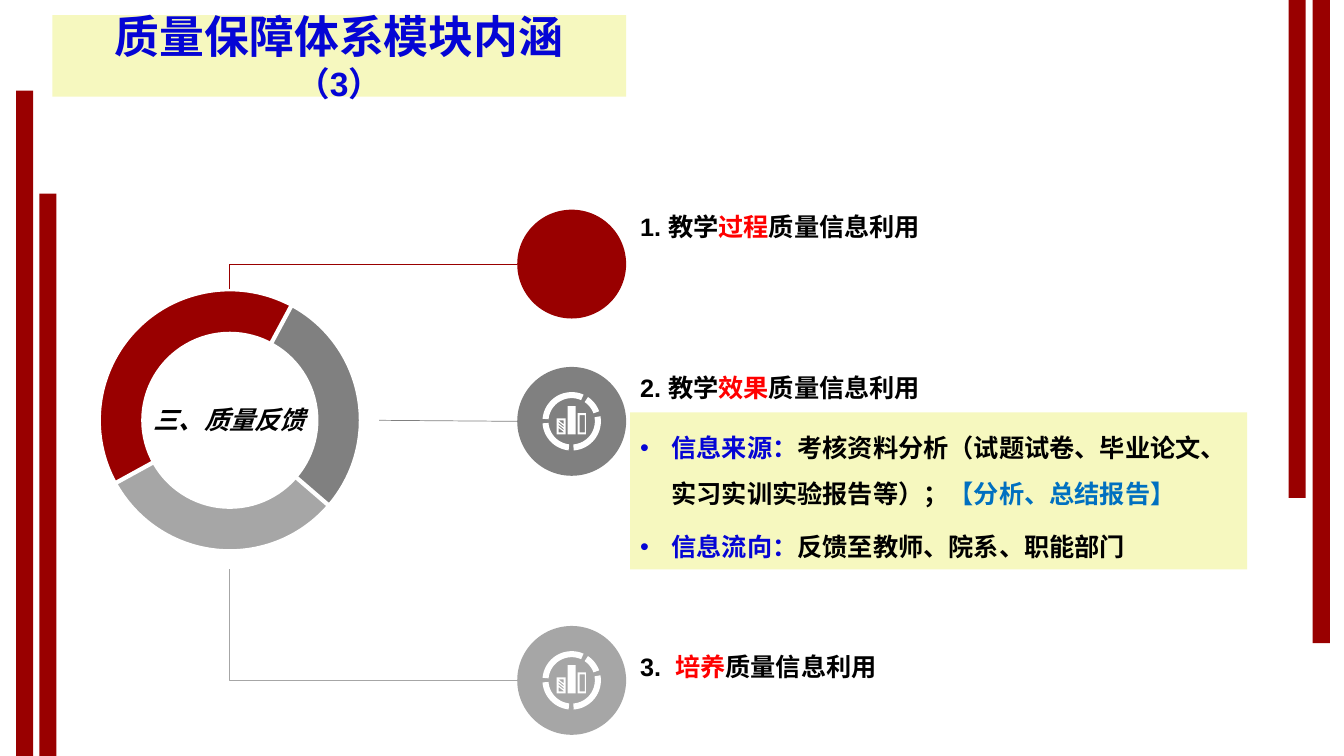
from math import cos, radians, sin

from lxml.etree import SubElement
from pptx import Presentation
from pptx.dml.color import RGBColor
from pptx.enum.shapes import MSO_CONNECTOR, MSO_SHAPE
from pptx.enum.text import MSO_ANCHOR, MSO_AUTO_SIZE, PP_ALIGN
from pptx.oxml.ns import qn
from pptx.util import Inches, Pt

LATIN, CHINESE = "Arial", "Noto Sans CJK SC"
RED, DARK_GRAY, LIGHT_GRAY = "990000", "808080", "A6A6A6"
WHITE, BLACK, CREAM = "FFFFFF", "000000", "F6F8BF"
BLUE, SKY_BLUE, BRIGHT_RED = "0505D5", "0070C0", "FF0000"
CIRCLE_LEFT, CIRCLE_SIZE = 5.13, 1.08
RING_BOX = (0.98, 2.87, 2.6, 2.6)
RING_CENTER_X = 2.28
TEXT_LEFT = 6.25


def color(hex_string):
    return RGBColor.from_string(hex_string)


def fill_shape(shape, fill, outline=None):
    shape.fill.solid()
    shape.fill.fore_color.rgb = color(fill)
    if outline:
        shape.line.color.rgb = color(outline)
        shape.line.width = Pt(3)
    else:
        shape.line.fill.background()


def add_figure(slide, kind, box, fill, outline=None, adjustments=()):
    shape = slide.shapes.add_shape(kind, *map(Inches, box))
    shape.shadow.inherit = False
    fill_shape(shape, fill, outline)
    for index, value in enumerate(adjustments):
        shape.adjustments[index] = value
    return shape


def add_run(paragraph, text, hex_color, size=18, latin=LATIN, italic=False):
    run = paragraph.add_run()
    run.text = text
    font = run.font
    font.name, font.size, font.bold, font.italic = latin, Pt(size), True, italic
    font.color.rgb = color(hex_color)
    SubElement(font._element, qn("a:ea"), typeface=CHINESE)


def place(shape, box):
    shape.left, shape.top, shape.width, shape.height = map(Inches, box)


def fill_title(slide):
    title = slide.shapes.title
    place(title, (0.52, 0.15, 5.69, 0.81))
    geometry = SubElement(title._element.spPr, qn("a:prstGeom"), prst="roundRect")
    SubElement(geometry, qn("a:avLst"))
    fill_shape(title, CREAM)
    frame = title.text_frame
    frame.auto_size = MSO_AUTO_SIZE.NONE
    frame.word_wrap = True
    frame.vertical_anchor = MSO_ANCHOR.MIDDLE
    frame.margin_left = frame.margin_right = Inches(0.2)
    paragraph = frame.paragraphs[0]
    paragraph.alignment = PP_ALIGN.CENTER
    add_run(paragraph, "质量保障体系模块内涵", BLUE, 32)
    add_run(paragraph, "（3）", BLUE, 24)


def fill_details(slide, items):
    body = slide.placeholders[1]
    place(body, (TEXT_LEFT, 4.09, 6.12, 1.56))
    fill_shape(body, CREAM)
    frame = body.text_frame
    frame.auto_size = MSO_AUTO_SIZE.NONE
    frame.word_wrap = True
    for index, runs in enumerate(items):
        paragraph = frame.add_paragraph() if index else frame.paragraphs[0]
        paragraph.line_spacing = 1.5
        paragraph.space_before, paragraph.space_after = Pt(0), Pt(6)
        properties = paragraph._p.get_or_add_pPr()
        properties.set("marL", str(Inches(0.31)))
        properties.set("indent", str(-Inches(0.31)))
        SubElement(properties, qn("a:buFont"), typeface=LATIN)
        SubElement(properties, qn("a:buChar"), char="•")
        for text, hex_color in runs:
            add_run(paragraph, text, hex_color, latin=CHINESE)


def add_heading(slide, top, before, highlight, after):
    box = slide.shapes.add_textbox(*map(Inches, (TEXT_LEFT, top, 4.4, 0.4)))
    box.text_frame.word_wrap = True
    paragraph = box.text_frame.paragraphs[0]
    add_run(paragraph, before, BLACK)
    add_run(paragraph, highlight, BRIGHT_RED)
    add_run(paragraph, after, BLACK)


def add_line(slide, kind, begin, end, hex_color):
    line = slide.shapes.add_connector(kind, *map(Inches, begin + end))
    line.line.color.rgb = color(hex_color)
    line.line.width = Pt(0.5)
    properties = line._element.spPr
    SubElement(properties, qn("a:effectLst"))
    if kind == MSO_CONNECTOR.ELBOW:
        properties.find(qn("a:prstGeom")).set("prst", "bentConnector2")


def ring_segment(start, end, outer=0.29, inner=0.23, steps=16):
    angles = [radians(start + (end - start) * i / steps) for i in range(steps + 1)]
    return ([(outer * cos(a), outer * sin(a)) for a in angles]
            + [(inner * cos(a), inner * sin(a)) for a in reversed(angles)])


def rectangle(left, top, right, bottom):
    return [(left, top), (right, top), (right, bottom), (left, bottom)]


def stripe(top, left=-0.13, right=-0.08, drop=0.04, thickness=0.015):
    return [(left, top), (right, top + drop),
            (right, top + drop + thickness), (left, top + thickness)]


def add_chart_icon(slide, center_x, center_y):
    """Broken ring around three bars: hatched, solid and hollow."""
    outlines = [ring_segment(*span) for span in
                ((-10, 86), (96, 176), (185, 294), (304, 340))]
    outlines += [rectangle(*bar) for bar in (
        (-0.15, -0.03, -0.06, 0.13), (-0.13, -0.01, -0.08, 0.11),
        (-0.04, -0.15, 0.04, 0.13),
        (0.06, -0.08, 0.14, 0.13), (0.08, -0.06, 0.13, 0.11))]
    outlines += [stripe(top) for top in (-0.01, 0.02, 0.05)]
    builder = None
    for outline in outlines:
        points = [(Inches(center_x + x), Inches(center_y + y)) for x, y in outline]
        if builder is None:
            builder = slide.shapes.build_freeform(*points[0])
        else:
            builder.move_to(*points[0])
        builder.add_line_segments(points[1:], close=True)
    icon = builder.convert_to_shape()
    icon.shadow.inherit = False
    fill_shape(icon, WHITE)


def add_ring(slide):
    center = add_figure(slide, MSO_SHAPE.OVAL, (0.79, 2.68, 2.97, 2.97), WHITE)
    center.text_frame.vertical_anchor = MSO_ANCHOR.MIDDLE
    paragraph = center.text_frame.paragraphs[0]
    paragraph.alignment = PP_ALIGN.CENTER
    add_run(paragraph, "三、质量反馈", BLACK, italic=True)
    add_figure(slide, MSO_SHAPE.DONUT, RING_BOX, RED, WHITE, [0.17])
    for start, end, fill in ((351.95, 151.2, LIGHT_GRAY), (298.25, 40.72, DARK_GRAY)):
        # Arc angles are stored in 60000ths of a degree, adjustments in 100000ths.
        add_figure(slide, MSO_SHAPE.BLOCK_ARC, RING_BOX, fill, WHITE,
                   [start * 0.6, end * 0.6, 0.17])


def main():
    presentation = Presentation()
    presentation.slide_width, presentation.slide_height = Inches(13.33), Inches(7.5)
    slide = presentation.slides.add_slide(presentation.slide_layouts[1])

    for left, top, height in ((0.16, 0.9, 6.6), (0.39, 1.92, 5.58),
                              (12.78, 0, 4.94), (13.02, 0, 6.38)):
        add_figure(slide, MSO_SHAPE.RECTANGLE, (left, top, 0.17, height), RED)

    fill_title(slide)
    fill_details(slide, [
        [("信息来源：", BLUE),
         ("考核资料分析（试题试卷、毕业论文、实习实训实验报告等）；", BLACK),
         ("【分析、总结报告】", SKY_BLUE)],
        [("信息流向：", BLUE), ("反馈至教师、院系、职能部门", BLACK)],
    ])
    add_ring(slide)

    elbow, straight = MSO_CONNECTOR.ELBOW, MSO_CONNECTOR.STRAIGHT
    branches = (
        (2.62, RED, elbow, (RING_CENTER_X, 2.87), False,
         2.05, "1. 教学", "过程"),
        (4.18, DARK_GRAY, straight, (3.76, 4.17), True,
         3.64, "2. 教学", "效果"),
        (6.75, LIGHT_GRAY, elbow, (RING_CENTER_X, 5.65), True,
         6.41, "3.  ", "培养"),
    )
    for middle, fill, kind, line_end, has_icon, text_top, before, highlight in branches:
        add_line(slide, kind, (CIRCLE_LEFT, middle), line_end, fill)
        add_figure(slide, MSO_SHAPE.OVAL, (CIRCLE_LEFT, middle - CIRCLE_SIZE / 2,
                                           CIRCLE_SIZE, CIRCLE_SIZE), fill)
        if has_icon:
            add_chart_icon(slide, CIRCLE_LEFT + CIRCLE_SIZE / 2, middle)
        add_heading(slide, text_top, before, highlight, "质量信息利用")

    presentation.save("out.pptx")


if __name__ == "__main__":
    main()
